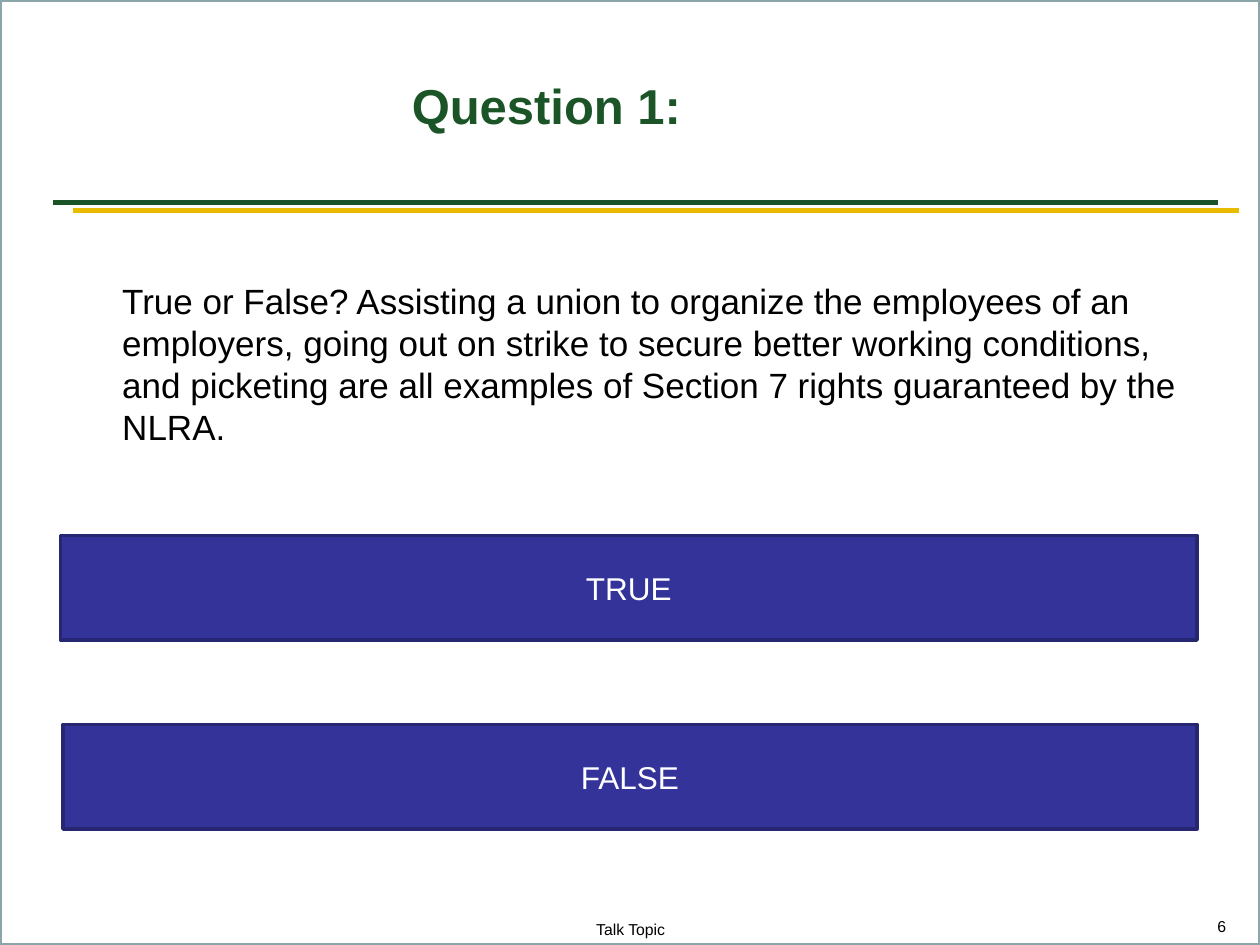
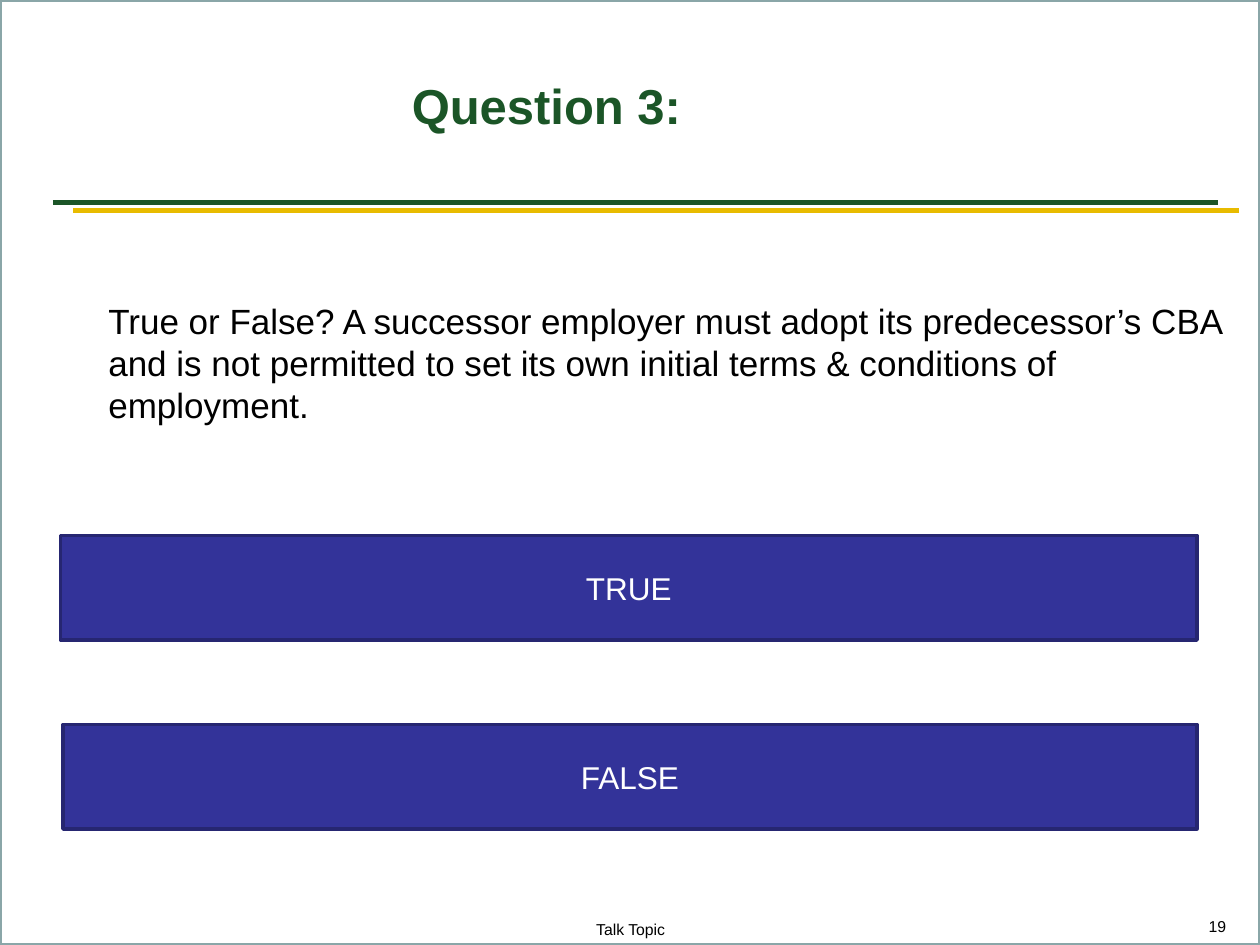
from pptx import Presentation
from pptx.dml.color import RGBColor
from pptx.enum.shapes import MSO_CONNECTOR, MSO_SHAPE
from pptx.enum.text import MSO_ANCHOR, PP_ALIGN
from pptx.oxml.ns import qn
from pptx.util import Inches, Pt
from lxml.etree import SubElement

# Shared style
FONT = "Arial"
GREEN = RGBColor(0x1B, 0x55, 0x27)
GOLD = RGBColor(0xE8, 0xBB, 0x00)
BLUE = RGBColor(0x33, 0x33, 0x99)
DARK_BLUE = RGBColor(0x26, 0x26, 0x71)
FRAME_GREY = RGBColor(0x8A, 0xA6, 0xA8)
BLACK = RGBColor(0x00, 0x00, 0x00)
WHITE = RGBColor(0xFF, 0xFF, 0xFF)

SLIDE_SIZE = (10, 7.5)
FOOTER = "Talk Topic"
TITLE_BOX = (3.17, 0.17, 6.33, 1.33)
FOOTER_BOX = (3.42, 7.25, 3.17, 0.25)
NUMBER_BOX = (7.83, 7.23, 2, 0.25)
RULES = [(0.42, 1.61, GREEN), (0.58, 1.67, GOLD)]
RULE_LENGTH = 9.25
ANSWERS = [("TRUE", (0.48, 4.25, 9.02, 0.83)),
           ("FALSE", (0.5, 5.75, 9, 0.83))]

# Content: title, statement, statement box, statement indent, page number
QUESTIONS = [
    ("Question 1:",
     "True or False? Assisting a union to organize the employees of an "
     "employers, going out on strike to secure better working conditions, "
     "and picketing are all examples of Section 7 rights guaranteed by the "
     "NLRA.",
     (0.49, 2.17, 9.01, 1.75), 0.38, "6"),
    ("Question 3:",
     "True or False? A successor employer must adopt its predecessor’s CBA "
     "and is not permitted to set its own initial terms & conditions of "
     "employment.",
     (0.01, 2.33, 10, 1), 0.75, "19"),
]


def inches(box):
    return [Inches(length) for length in box]


def write(frame, text, size, color=BLACK, bold=False,
          align=PP_ALIGN.LEFT, anchor=MSO_ANCHOR.TOP):
    frame.word_wrap = True
    frame.vertical_anchor = anchor
    paragraph = frame.paragraphs[0]
    paragraph.text = text
    paragraph.alignment = align
    font = paragraph.font
    font.name, font.size, font.bold = FONT, Pt(size), bold
    font.color.rgb = color


def add_text(slide, box, text, size, indent=0, **style):
    frame = slide.shapes.add_textbox(*inches(box)).text_frame
    frame.margin_left = Inches(0.1 + indent)
    write(frame, text, size, **style)


def add_rule(slide, left, top, color):
    rule = slide.shapes.add_connector(
        MSO_CONNECTOR.STRAIGHT,
        *inches((left, top, left + RULE_LENGTH, top)))
    rule.line.color.rgb = color
    rule.line.width = Pt(3)
    SubElement(rule._element.spPr, qn("a:effectLst"))


def add_outlined(slide, preset, box, line_color):
    shape = slide.shapes.add_shape(preset, *inches(box))
    shape.shadow.inherit = False
    shape.line.color.rgb = line_color
    shape.line.width = Pt(2)
    return shape


def add_frame(slide):
    frame = add_outlined(slide, MSO_SHAPE.ACTION_BUTTON_CUSTOM,
                         (0, 0, *SLIDE_SIZE), FRAME_GREY)
    frame.fill.background()


def add_answer(slide, label, box):
    button = add_outlined(slide, MSO_SHAPE.RECTANGLE, box, DARK_BLUE)
    button.fill.solid()
    button.fill.fore_color.rgb = BLUE
    write(button.text_frame, label, 18, color=WHITE,
          align=PP_ALIGN.CENTER, anchor=MSO_ANCHOR.MIDDLE)


def add_question(deck, title, statement, statement_box, indent, number):
    slide = deck.slides.add_slide(deck.slide_layouts[6])
    # Double rule and page number
    for left, top, color in RULES:
        add_rule(slide, left, top, color)
    add_text(slide, NUMBER_BOX, number, 9, align=PP_ALIGN.RIGHT)
    # Question
    add_text(slide, statement_box, statement, 20, indent=indent)
    add_text(slide, TITLE_BOX, title, 28, color=GREEN, bold=True,
             anchor=MSO_ANCHOR.MIDDLE)
    # Footer and slide frame
    add_text(slide, FOOTER_BOX, FOOTER, 9, align=PP_ALIGN.CENTER)
    add_frame(slide)
    # Answers
    for label, box in ANSWERS:
        add_answer(slide, label, box)


def main():
    deck = Presentation()
    deck.slide_width, deck.slide_height = inches(SLIDE_SIZE)
    for question in QUESTIONS:
        add_question(deck, *question)
    deck.save("out.pptx")


if __name__ == "__main__":
    main()
